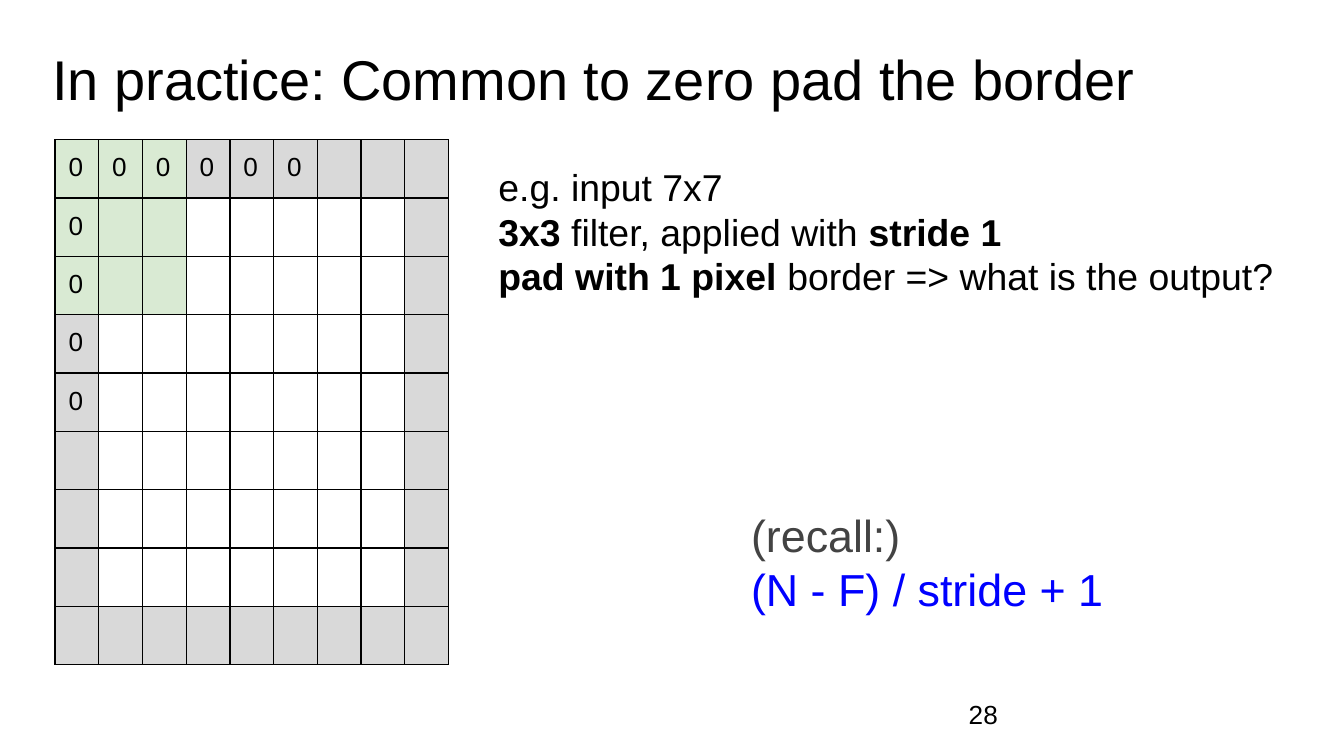
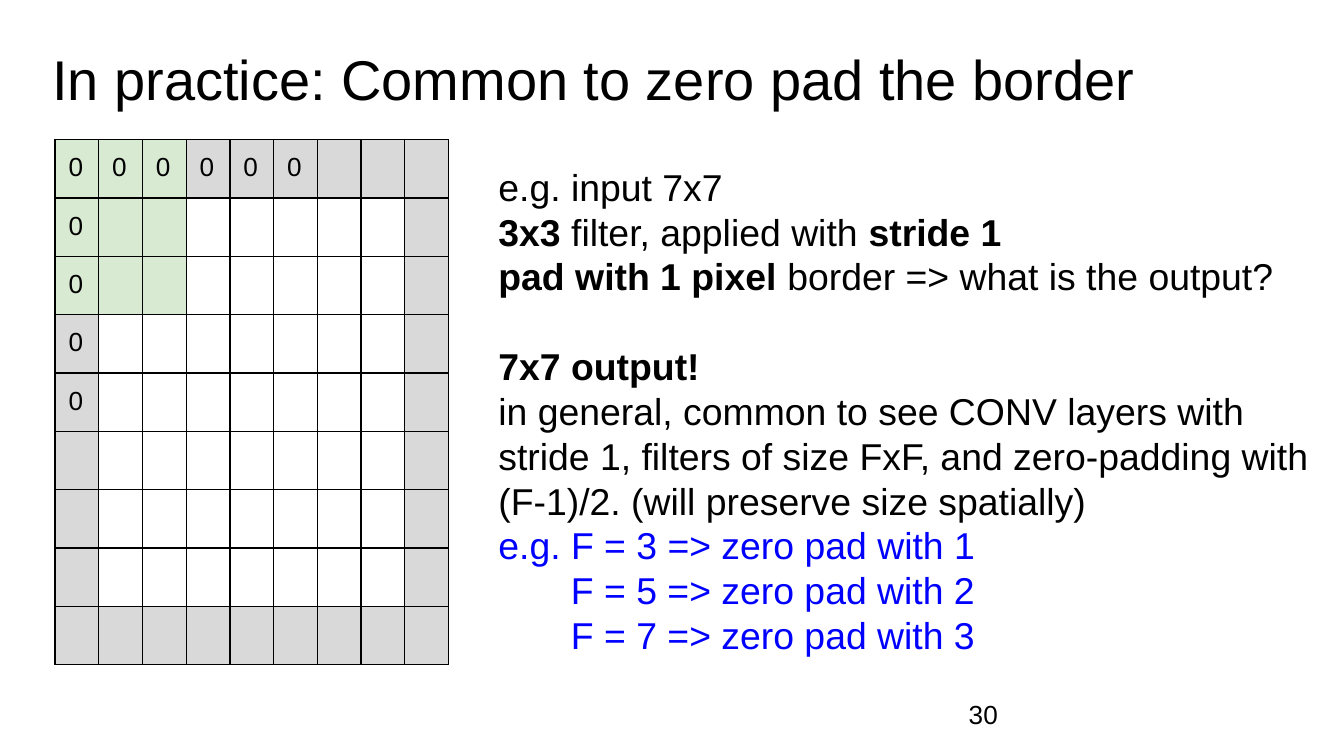
import pptx
import pptx.dml.color
import pptx.enum.text
import pptx.oxml
import pptx.oxml.ns
import pptx.util

BLACK = pptx.dml.color.RGBColor(0x00, 0x00, 0x00)
WHITE = pptx.dml.color.RGBColor(0xFF, 0xFF, 0xFF)
GRAY = pptx.dml.color.RGBColor(0xD9, 0xD9, 0xD9)
GREEN = pptx.dml.color.RGBColor(0xD9, 0xEA, 0xD3)
DARK = pptx.dml.color.RGBColor(0x43, 0x43, 0x43)
BLUE = pptx.dml.color.RGBColor(0x00, 0x00, 0xFF)

FONT = "Arial"
WIDTH, HEIGHT = pptx.util.Inches(10), pptx.util.Inches(5.625)
INSET = pptx.util.Inches(0.1)
LINE_RATIO = 1.2
MIDDLE = pptx.enum.text.MSO_ANCHOR.MIDDLE

TITLE_AREA = (2.9, 4.09, 90.6, 14.4)
NUMBER_AREA = (71.1, 90.67, 6, 7.64)
BODY_AREA = (36.1, 19.91, 63.9, 28.8)
RECALL_AREA = (54.9, 62.4, 31.6, 23.82)
GRID_AREA = (4.1, 18.49, 29.3, 66.85)

GRID_SIZE = 9
FILTER_SIZE = 3
ZEROS_ACROSS = 6
ZEROS_DOWN = 5
GRID_TEXT_SIZE = 14

TITLE = "In practice: Common to zero pad the border"
QUESTION = [
    {"text": ["e.g. input 7x7"]},
    {"text": ["", "3x3", " filter, applied with ", "stride 1"]},
    {"text": ["", "pad with 1 pixel", " border => what is the output?"]},
]
ANSWER = [
    {"text": ["", "7x7 output!"], "before": 24},
    {"text": ["in general, common to see CONV layers with stride 1, filters of size FxF, "
              "and zero-padding with (F-1)/2. (will preserve size spatially)"]},
    {"text": ["e.g. F = 3 => zero pad with 1"], "color": BLUE},
    {"text": ["F = 5 => zero pad with 2"], "color": BLUE, "indent": 0.54},
    {"text": ["F = 7 => zero pad with 3"], "color": BLUE, "indent": 0.54},
]
RECALL = [
    {"text": ["(recall:)"], "color": DARK},
    {"text": ["(N - F) / stride + 1"], "color": BLUE},
]
PAGES = [
    {"number": "28", "body": QUESTION, "recall": RECALL},
    {"number": "30", "body": QUESTION + ANSWER, "recall": []},
]


def place(area):
    left, top, width, height = area
    return [round(share * side / 100) for share, side in
            ((left, WIDTH), (top, HEIGHT), (width, WIDTH), (height, HEIGHT))]


def add_span(para, text, size, color=BLACK, bold=False):
    span = para.add_run()
    span.text = text
    span.font.name = FONT
    span.font.size = pptx.util.Pt(size)
    span.font.bold = bold
    span.font.color.rgb = color


def add_text(page, area, lines, size, anchor=pptx.enum.text.MSO_ANCHOR.TOP):
    frame = page.shapes.add_textbox(*place(area)).text_frame
    frame.word_wrap = True
    frame.vertical_anchor = anchor
    frame.margin_left = frame.margin_right = INSET
    frame.margin_top = frame.margin_bottom = INSET
    for index, line in enumerate(lines):
        para = frame.add_paragraph() if index else frame.paragraphs[0]
        para.line_spacing = pptx.util.Pt(size * LINE_RATIO)
        para.space_before = pptx.util.Pt(line.get("before", 0))
        if "indent" in line:
            properties = para._p.get_or_add_pPr()
            properties.set("marL", str(pptx.util.Inches(line["indent"])))
            properties.set("indent", "0")
        for position, text in enumerate(line["text"]):
            if text:
                add_span(para, text, size, line.get("color", BLACK), bold=position % 2 == 1)


def cell_color(row, column):
    if max(row, column) < FILTER_SIZE:
        return GREEN
    if row in (0, GRID_SIZE - 1) or column in (0, GRID_SIZE - 1):
        return GRAY
    return WHITE


def add_borders(cell):
    properties = cell._tc.get_or_add_tcPr()
    for side in "LRTB":
        properties.append(pptx.oxml.parse_xml(
            f'<a:ln{side} {pptx.oxml.ns.nsdecls("a")} w="{pptx.util.Pt(0.75)}">'
            f'<a:solidFill><a:srgbClr val="{BLACK}"/></a:solidFill></a:ln{side}>'))


def add_padded_grid(page):
    left, top, width, height = place(GRID_AREA)
    table = page.shapes.add_table(GRID_SIZE, GRID_SIZE, left, top, width, height).table
    table.first_row = table.horz_banding = False
    for row in range(GRID_SIZE):
        table.rows[row].height = height // GRID_SIZE
        table.columns[row].width = width // GRID_SIZE
        for column in range(GRID_SIZE):
            cell = table.cell(row, column)
            cell.margin_left = cell.margin_right = INSET
            cell.margin_top = cell.margin_bottom = INSET
            add_borders(cell)
            cell.fill.solid()
            cell.fill.fore_color.rgb = cell_color(row, column)
            para = cell.text_frame.paragraphs[0]
            if (row == 0 and column < ZEROS_ACROSS) or (column == 0 and row < ZEROS_DOWN):
                add_span(para, "0", GRID_TEXT_SIZE)
            else:
                para._p.append(pptx.oxml.parse_xml(
                    f'<a:endParaRPr {pptx.oxml.ns.nsdecls("a")} sz="{GRID_TEXT_SIZE * 100}"/>'))


def main():
    deck = pptx.Presentation()
    deck.slide_width, deck.slide_height = WIDTH, HEIGHT
    for content in PAGES:
        page = deck.slides.add_slide(deck.slide_layouts[6])
        add_text(page, NUMBER_AREA, [{"text": [content["number"]]}], 14, anchor=MIDDLE)
        add_text(page, TITLE_AREA, [{"text": [TITLE]}], 30)
        add_padded_grid(page)
        add_text(page, BODY_AREA, content["body"], 20)
        if content["recall"]:
            add_text(page, RECALL_AREA, content["recall"], 24, anchor=MIDDLE)
    deck.save("out.pptx")


if __name__ == "__main__":
    main()
